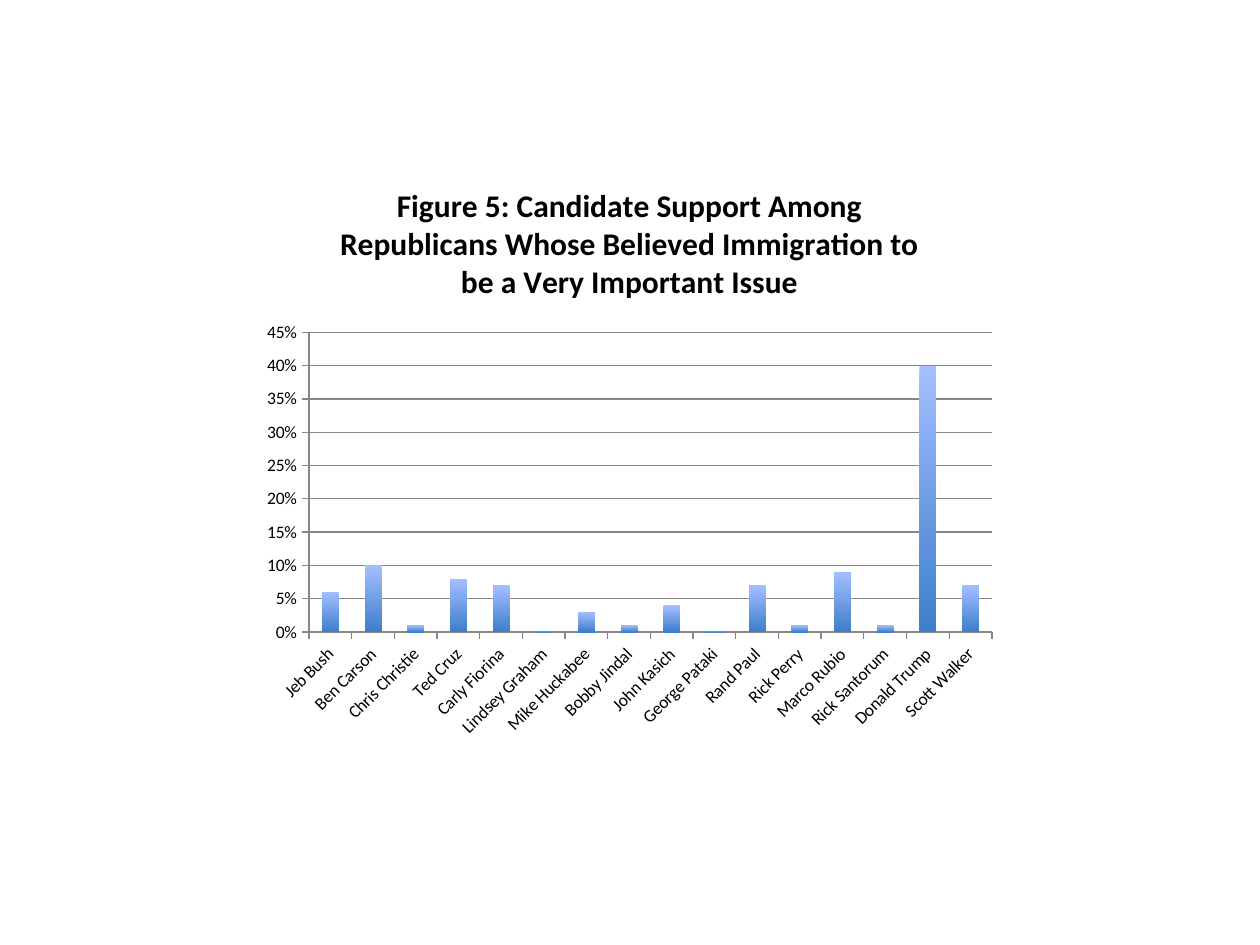
from dataclasses import dataclass

from pptx import Presentation
from pptx.chart.data import CategoryChartData
from pptx.dml.color import RGBColor
from pptx.enum.chart import XL_CHART_TYPE, XL_TICK_MARK
from pptx.oxml.ns import qn
from pptx.util import Emu, Pt


@dataclass(frozen=True)
class Theme:
    font: str = "Calibri"
    text: RGBColor = RGBColor(0x00, 0x00, 0x00)
    axis: RGBColor = RGBColor(0x86, 0x86, 0x86)
    bar_top: RGBColor = RGBColor(0xA3, 0xBF, 0xFF)
    bar_bottom: RGBColor = RGBColor(0x3D, 0x7E, 0xCC)
    title_size: Pt = Pt(18)
    label_size: Pt = Pt(10)
    line_width: Pt = Pt(0.75)


THEME = Theme()
PX_PER_INCH = 126
TITLE = ("Figure 5: Candidate Support Among Republicans Whose Believed "
         "Immigration to be a Very Important Issue")
SUPPORT = {
    "Jeb Bush": 0.06, "Ben Carson": 0.1, "Chris Christie": 0.01,
    "Ted Cruz": 0.08, "Carly Fiorina": 0.07, "Lindsey Graham": 0,
    "Mike Huckabee": 0.03, "Bobby Jindal": 0.01, "John Kasich": 0.04,
    "George Pataki": 0, "Rand Paul": 0.07, "Rick Perry": 0.01,
    "Marco Rubio": 0.09, "Rick Santorum": 0.01, "Donald Trump": 0.4,
    "Scott Walker": 0.07,
}


def px(n):
    return Emu(round(n * 914400 / PX_PER_INCH))


def style_font(font, size, bold=False):
    font.name = THEME.font
    font.size = size
    font.bold = bold
    font.color.rgb = THEME.text


def style_line(line):
    line.color.rgb = THEME.axis
    line.width = THEME.line_width


def set_title(chart, text):
    chart.has_title = True
    chart.chart_title.include_in_layout = False
    p = chart.chart_title.text_frame.paragraphs[0]
    p.text = text
    style_font(p.font, THEME.title_size, bold=True)


def style_axes(chart):
    for axis in (chart.category_axis, chart.value_axis):
        axis.major_tick_mark = XL_TICK_MARK.OUTSIDE
        axis.minor_tick_mark = XL_TICK_MARK.NONE
        style_line(axis.format.line)
        style_font(axis.tick_labels.font, THEME.label_size)

    names = chart.category_axis._element.find(qn("c:txPr"))
    names.find(qn("a:bodyPr")).set("rot", str(-45 * 60000))

    values = chart.value_axis
    values.minimum_scale, values.maximum_scale = 0, 0.45
    values.major_unit = 0.05
    values.has_major_gridlines = True
    style_line(values.major_gridlines.format.line)
    values.tick_labels.number_format = "0%"
    values.tick_labels.number_format_is_linked = False


def style_bars(plot):
    plot.gap_width = 150
    plot.vary_by_categories = False
    fill = plot.series[0].format.fill
    fill.gradient()
    fill.gradient_angle = 270
    colors = (THEME.bar_top, THEME.bar_bottom)
    for position, (stop, color) in enumerate(zip(fill.gradient_stops, colors)):
        stop.color.rgb = color
        stop.position = position


def add_support_chart(s, left, top, width, height):
    data = CategoryChartData(number_format="0%")
    data.categories = list(SUPPORT)
    data.add_series("Series 1", list(SUPPORT.values()))
    chart = s.shapes.add_chart(XL_CHART_TYPE.COLUMN_CLUSTERED, px(left), px(top),
                               px(width), px(height), data).chart
    style_font(chart.font, THEME.label_size)
    chart.has_legend = False
    set_title(chart, TITLE)
    style_axes(chart)
    style_bars(chart.plots[0])


def main():
    prs = Presentation()
    prs.slide_width, prs.slide_height = px(1260), px(945)
    s = prs.slides.add_slide(prs.slide_layouts[6])
    add_support_chart(s, 252, 159, 755, 590)
    prs.save("out.pptx")


if __name__ == "__main__":
    main()
